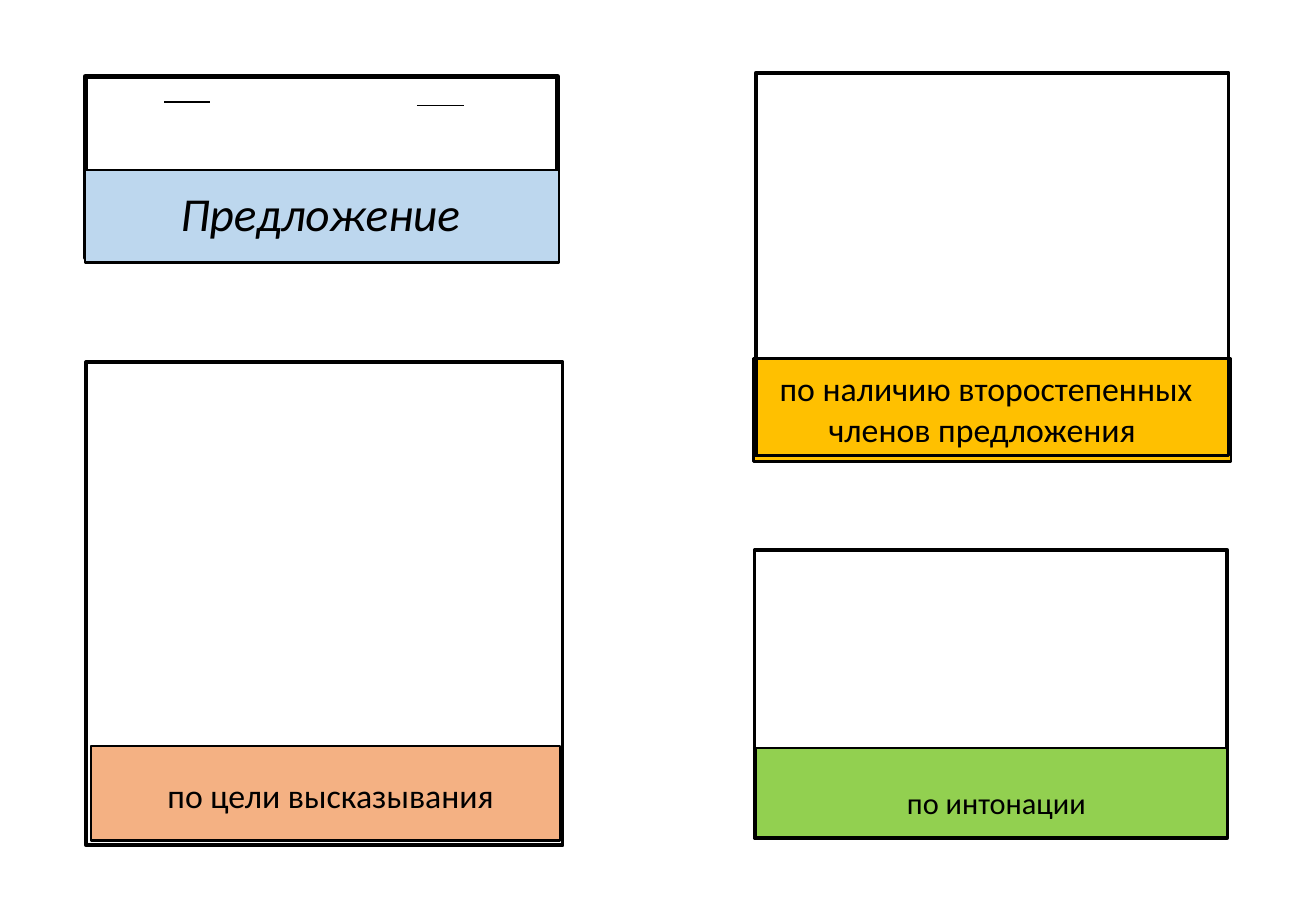
from dataclasses import dataclass
from typing import Optional

from lxml.etree import SubElement
from pptx import Presentation
from pptx.dml.color import RGBColor
from pptx.enum.shapes import MSO_CONNECTOR, MSO_SHAPE
from pptx.enum.text import MSO_AUTO_SIZE, PP_ALIGN
from pptx.oxml.ns import qn
from pptx.slide import Slide
from pptx.util import Inches, Pt

COLORS = {
    "black": "000000",
    "blue": "BDD7EE",
    "orange": "F4B183",
    "gold": "FFC000",
    "green": "92D050",
}
FONT = "Calibri"


@dataclass
class Box:
    left: float
    top: float
    width: float
    height: float
    line_width: float
    fill: Optional[str] = None


@dataclass
class Label:
    text: str
    left: float
    top: float
    width: float
    height: float
    size: int
    italic: bool = False
    align: PP_ALIGN = PP_ALIGN.CENTER


@dataclass
class Slot:
    left: float
    right: float
    top: float


# Pocket frames and coloured bands, from back to front
BOXES = [
    Box(0.7, 0.63, 3.89, 1.49, 3),
    Box(6.21, 4.53, 3.89, 2.37, 2.25),
    Box(6.22, 6.16, 3.88, 0.73, 1.5, "green"),
    Box(0.75, 6.14, 3.86, 0.78, 1.5, "orange"),
    Box(6.2, 2.95, 3.93, 0.85, 1.5, "gold"),
    Box(0.7, 1.4, 3.9, 0.76, 1.5, "blue"),
    Box(6.22, 0.6, 3.89, 3.15, 2.25),
    Box(0.71, 2.98, 3.92, 3.98, 2.25),
]

LABELS = [
    Label("Предложение", 1.35, 1.47, 2.57, 0.57, 28, italic=True),
    Label("по цели высказывания", 1.28, 6.33, 2.96, 0.44, 20, align=PP_ALIGN.LEFT),
    Label("по наличию второстепенных членов предложения ", 6.31, 2.98, 3.61, 0.77, 20),
    Label("по интонации", 6.6, 6.41, 3.2, 0.4, 18),
]

SLOTS = [Slot(1.35, 1.73, 0.84), Slot(3.43, 3.82, 0.87)]


def color(name: str) -> RGBColor:
    return RGBColor.from_string(COLORS[name])


def draw_box(slide: Slide, box: Box) -> None:
    shape = slide.shapes.add_shape(
        MSO_SHAPE.RECTANGLE,
        Inches(box.left), Inches(box.top), Inches(box.width), Inches(box.height),
    )
    shape.shadow.inherit = False
    if box.fill:
        shape.fill.solid()
        shape.fill.fore_color.rgb = color(box.fill)
    else:
        shape.fill.background()
    shape.line.color.rgb = color("black")
    shape.line.width = Pt(box.line_width)


def draw_label(slide: Slide, label: Label) -> None:
    shape = slide.shapes.add_textbox(
        Inches(label.left), Inches(label.top), Inches(label.width), Inches(label.height)
    )
    text_frame = shape.text_frame
    text_frame.word_wrap = True
    text_frame.auto_size = MSO_AUTO_SIZE.SHAPE_TO_FIT_TEXT
    text_frame.text = label.text
    paragraph = text_frame.paragraphs[0]
    paragraph.alignment = label.align
    font = paragraph.runs[0].font
    font.name = FONT
    font.size = Pt(label.size)
    font.italic = label.italic
    font.color.rgb = color("black")


def draw_slot(slide: Slide, slot: Slot) -> None:
    connector = slide.shapes.add_connector(
        MSO_CONNECTOR.STRAIGHT,
        Inches(slot.left), Inches(slot.top), Inches(slot.right), Inches(slot.top),
    )
    connector.line.color.rgb = color("black")
    connector.line.width = Pt(1)
    SubElement(connector._element.spPr, qn("a:effectLst"))


def main() -> None:
    presentation = Presentation()
    presentation.slide_width = Inches(10.83)
    presentation.slide_height = Inches(7.5)
    slide = presentation.slides.add_slide(presentation.slide_layouts[6])

    # Frames and bands
    for box in BOXES:
        draw_box(slide, box)

    # Band captions
    for label in LABELS:
        draw_label(slide, label)

    # Cutting slots in the sentence pocket
    for slot in SLOTS:
        draw_slot(slide, slot)

    presentation.save("out.pptx")


if __name__ == "__main__":
    main()
